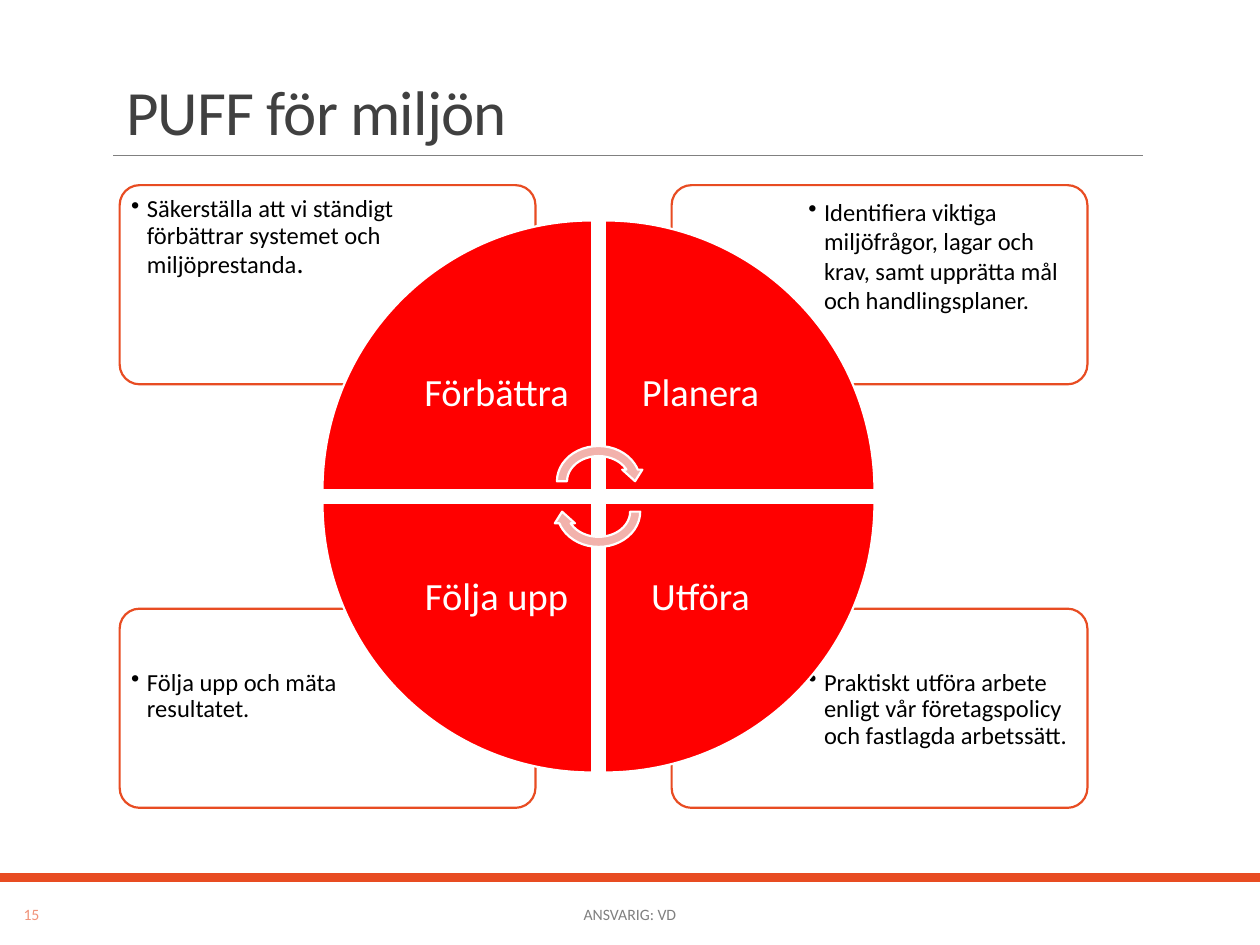
from dataclasses import dataclass

from lxml import etree
from pptx import Presentation
from pptx.dml.color import RGBColor
from pptx.enum.shapes import MSO_CONNECTOR, MSO_SHAPE
from pptx.enum.text import MSO_ANCHOR, MSO_AUTO_SIZE, PP_ALIGN
from pptx.oxml.ns import qn
from pptx.util import Pt

RECTANGLE = MSO_SHAPE.RECTANGLE
ROUNDED = MSO_SHAPE.ROUNDED_RECTANGLE
WEDGE = MSO_SHAPE.PIE_WEDGE
CIRCULAR_ARROW = MSO_SHAPE.CIRCULAR_ARROW
STRAIGHT = MSO_CONNECTOR.STRAIGHT
TOP, MIDDLE, BOTTOM = MSO_ANCHOR.TOP, MSO_ANCHOR.MIDDLE, MSO_ANCHOR.BOTTOM
LEFT, CENTER = PP_ALIGN.LEFT, PP_ALIGN.CENTER
TITLE_ONLY = 5


@dataclass(frozen=True)
class Theme:
    font: str = "Calibri"
    accent: str = "E84C22"
    wedge: str = "FF0000"
    arrow: str = "F2B2AC"
    white: str = "FFFFFF"
    black: str = "000000"
    heading: str = "404040"
    muted: str = "808080"
    number: str = "F1947A"
    title_size: float = 36
    phase_size: float = 22
    stop_size: float = 16
    note_size: float = 14
    footer_size: float = 9
    outline: float = 1.25


THEME = Theme()


@dataclass(frozen=True)
class Phase:
    """One quarter of the cycle: column and row are 0 or 1."""
    name: str
    column: int
    row: int
    rotation: int
    note: tuple
    note_spacing: float = 0.9


NOTE = THEME.note_size
PHASES = [
    Phase("Utföra", 1, 1, 180, (
        ("Praktiskt utföra arbete enligt vår företagspolicy och fastlagda arbetssätt.", NOTE),)),
    Phase("Följa upp", 0, 1, 270, (("Följa upp och mäta resultatet.", NOTE),)),
    Phase("Planera", 1, 0, 90, (
        ("Identifiera viktiga miljöfrågor, lagar och krav, samt upprätta mål "
         "och handlingsplaner.", NOTE),), 1.0),
    Phase("Förbättra", 0, 0, 0, (
        ("Säkerställa att vi ständigt förbättrar systemet och miljöprestanda", NOTE),
        (".", THEME.stop_size))),
]

# Cards behind the wheel
CARD_LEFT, CARD_TOP = 68.4, 105.8
CARD_WIDTH, CARD_HEIGHT = 237.6, 113.8
CARD_STEP_X, CARD_STEP_Y = 315.4, 242
NOTE_WIDTH, NOTE_HEIGHT, NOTE_GAP = 161.3, 80.6, 2.4
# Wheel of four wedges
WHEEL_LEFT, WHEEL_TOP = 184.3, 126
WEDGE_SIDE, WEDGE_STEP = 154.1, 161.3
LABEL_SIDE = 109.4


def points(*lengths):
    return [Pt(length) for length in lengths]


def color(value):
    return RGBColor.from_string(value)


def write_text(shape, runs, *, text_color, anchor=MIDDLE, align=CENTER, spacing=None,
               margins=(7.2, 3.6), bullet_indent=None, tracking=None):
    """Write one paragraph of (text, size) runs; margins are sides, then top and bottom."""
    frame = shape.text_frame
    frame.word_wrap = True
    frame.auto_size = MSO_AUTO_SIZE.NONE
    frame.vertical_anchor = anchor
    frame.margin_left = frame.margin_right = Pt(margins[0])
    frame.margin_top = frame.margin_bottom = Pt(margins[1])
    paragraph = frame.paragraphs[0]
    paragraph.alignment = align
    if spacing:
        paragraph.line_spacing = spacing
    if bullet_indent:
        properties = paragraph._p.get_or_add_pPr()
        properties.set("marL", str(Pt(bullet_indent)))
        properties.set("indent", str(-Pt(bullet_indent)))
        etree.SubElement(properties, qn("a:buChar")).set("char", "•")
    for text, size in runs:
        run = paragraph.add_run()
        run.text = text
        run.font.name = THEME.font
        run.font.size = Pt(size)
        run.font.color.rgb = color(text_color)
        if tracking:
            run._r.get_or_add_rPr().set("spc", str(int(tracking * 100)))


def add_text(slide, box, runs, **text_format):
    write_text(slide.shapes.add_textbox(*points(*box)), runs, **text_format)


def add_filled(slide, kind, box, fill, line=None, rotation=0):
    shape = slide.shapes.add_shape(kind, *points(*box))
    shape.shadow.inherit = False
    shape.rotation = rotation
    shape.fill.solid()
    shape.fill.fore_color.rgb = color(fill)
    if line:
        shape.line.color.rgb = color(line)
        shape.line.width = Pt(THEME.outline)
    else:
        shape.line.fill.background()
    return shape


def add_title(slide, text):
    title = slide.shapes.title
    title.left, title.top, title.width, title.height = points(64.8, 22.3, 594, 66.2)
    write_text(title, [(text, THEME.title_size)], text_color=THEME.heading,
               anchor=BOTTOM, align=LEFT, spacing=0.85, tracking=-0.5)


def add_title_rule(slide):
    rule = slide.shapes.add_connector(STRAIGHT, *points(64.8, 88.6, 653, 88.6))
    rule.line.color.rgb = color(THEME.muted)
    rule.line.width = Pt(0.5)
    etree.SubElement(rule._element.spPr, qn("a:effectLst"))


def add_card(slide, phase):
    left = CARD_LEFT + phase.column * CARD_STEP_X
    top = CARD_TOP + phase.row * CARD_STEP_Y
    card = add_filled(slide, ROUNDED, (left, top, CARD_WIDTH, CARD_HEIGHT),
                      THEME.white, THEME.accent)
    card.adjustments[0] = 0.1
    fill_color = card._element.spPr.find(qn("a:solidFill"))[0]
    etree.SubElement(fill_color, qn("a:alpha")).set("val", "90000")

    # The note sits in the card's outer corner, clear of the wheel
    note_left = left + (CARD_WIDTH - NOTE_WIDTH - NOTE_GAP if phase.column else NOTE_GAP)
    note_top = top + (CARD_HEIGHT - NOTE_HEIGHT - NOTE_GAP if phase.row else NOTE_GAP)
    add_text(slide, (note_left, note_top, NOTE_WIDTH, NOTE_HEIGHT), phase.note,
             text_color=THEME.black, anchor=TOP, align=LEFT, spacing=phase.note_spacing,
             margins=(4.2, 4.2), bullet_indent=9)


def add_wedge(slide, phase):
    left = WHEEL_LEFT + phase.column * WEDGE_STEP
    top = WHEEL_TOP + phase.row * WEDGE_STEP
    add_filled(slide, WEDGE, (left, top, WEDGE_SIDE, WEDGE_SIDE),
               THEME.wedge, THEME.white, phase.rotation)

    # The label fills the square at the wedge's inner corner
    offset = WEDGE_SIDE - LABEL_SIDE
    label_left = left + (1 - phase.column) * offset
    label_top = top + (1 - phase.row) * offset
    add_text(slide, (label_left, label_top, LABEL_SIDE, LABEL_SIDE),
             [(phase.name, THEME.phase_size)], text_color=THEME.white,
             spacing=0.9, margins=(12.2, 12.2))


def main():
    presentation = Presentation()
    presentation.slide_width, presentation.slide_height = points(720, 540)
    slide = presentation.slides.add_slide(presentation.slide_layouts[TITLE_ONLY])

    add_filled(slide, RECTANGLE, (0, 499, 720, 5), THEME.accent)
    add_title_rule(slide)
    add_title(slide, "PUFF för miljön")
    for phase in PHASES:
        add_card(slide, phase)
    for phase in reversed(PHASES):
        add_wedge(slide, phase)
    for top, rotation in ((252, 0), (269.3, 180)):
        add_filled(slide, CIRCULAR_ARROW, (315.4, top, 53.3, 46.1),
                   THEME.arrow, THEME.white, rotation)
    add_text(slide, (2.9, 508.3, 30.2, 28.8), [("15", THEME.footer_size)],
             text_color=THEME.number)
    add_text(slide, (217.4, 508.3, 285.1, 28.8), [("ANSVARIG: VD", THEME.footer_size)],
             text_color=THEME.muted)

    presentation.save("out.pptx")


if __name__ == "__main__":
    main()
